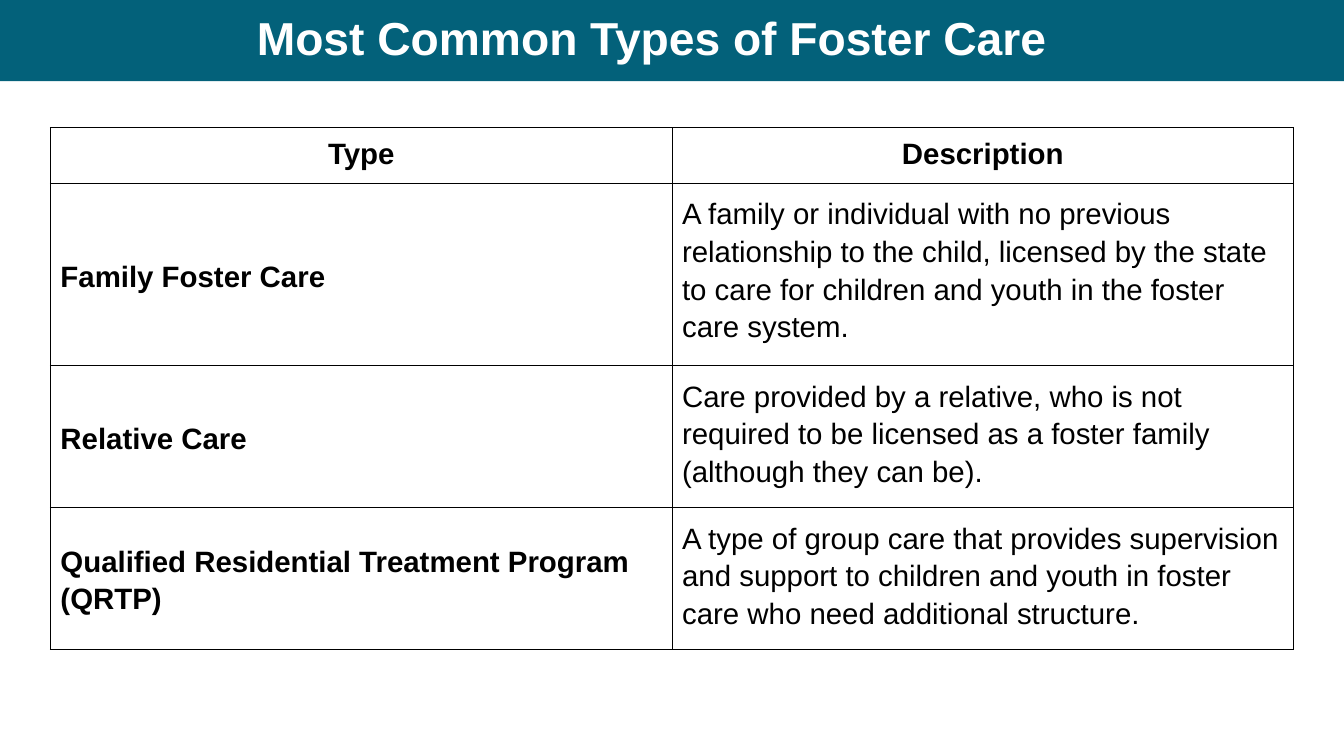
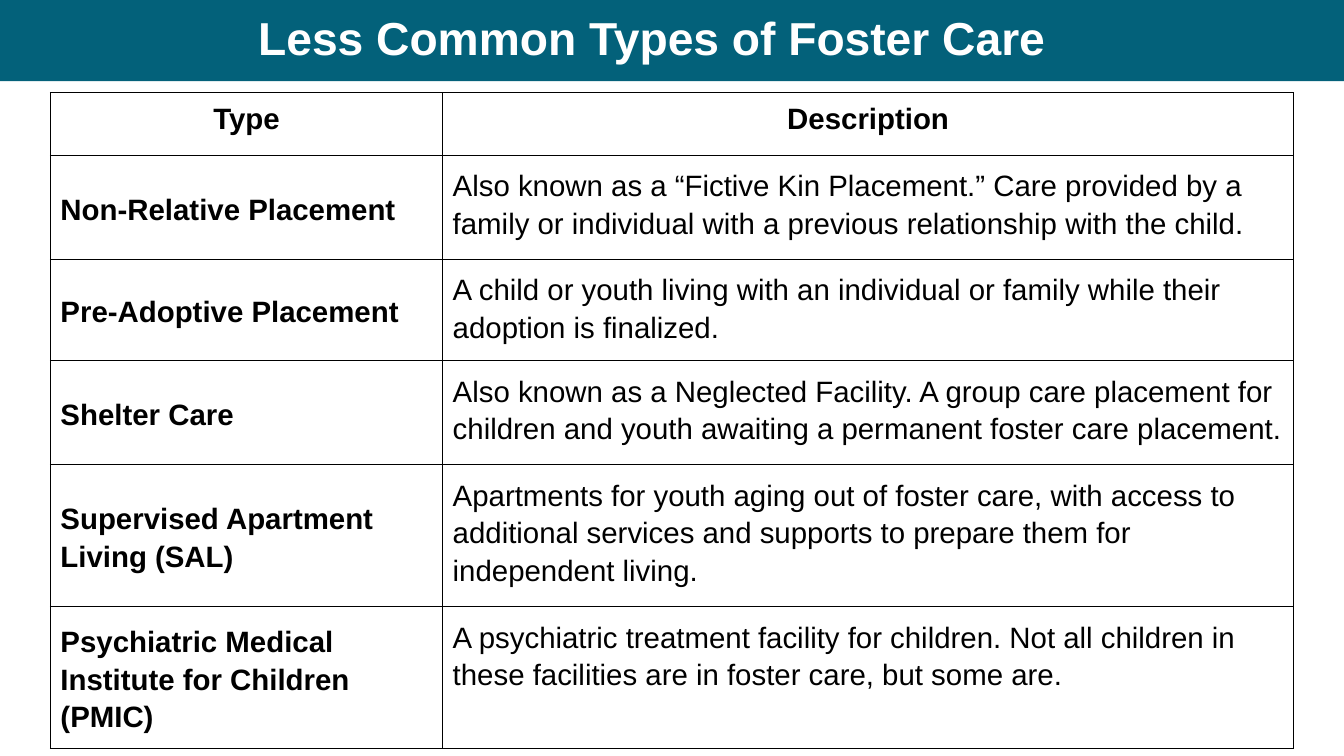
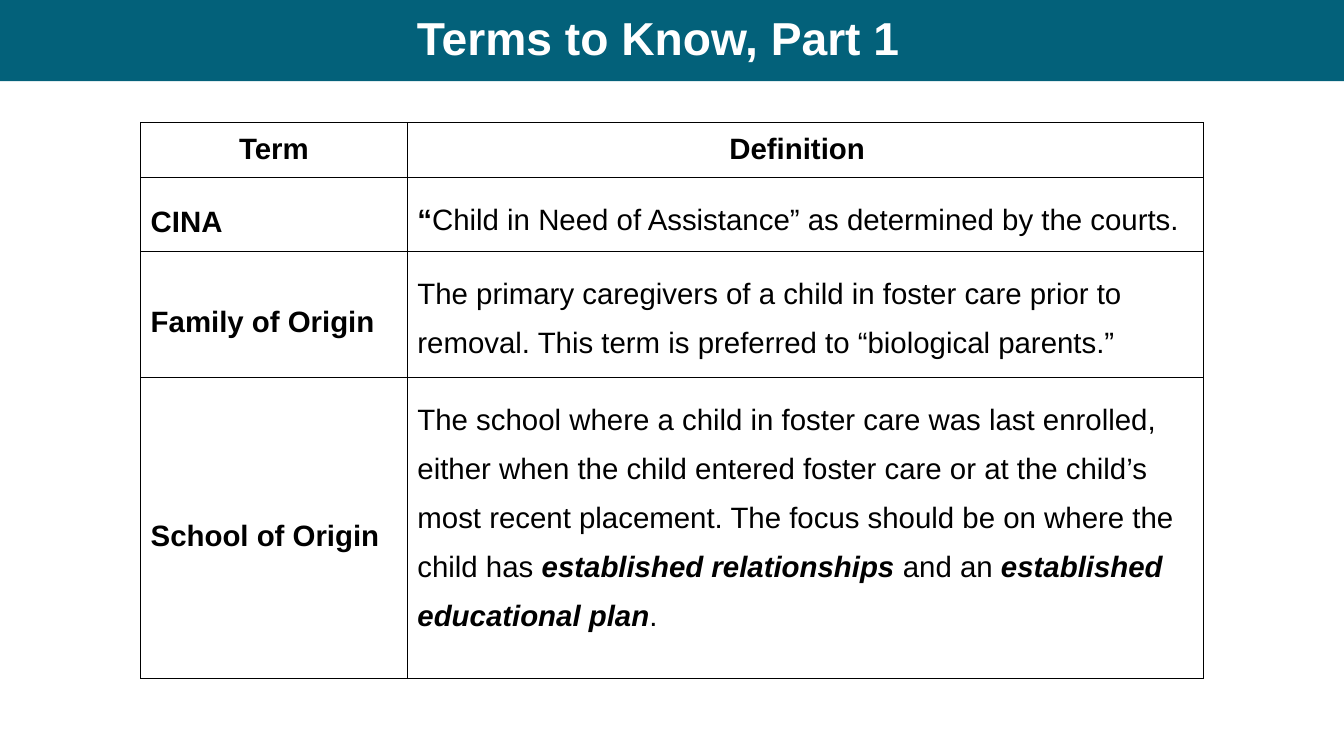
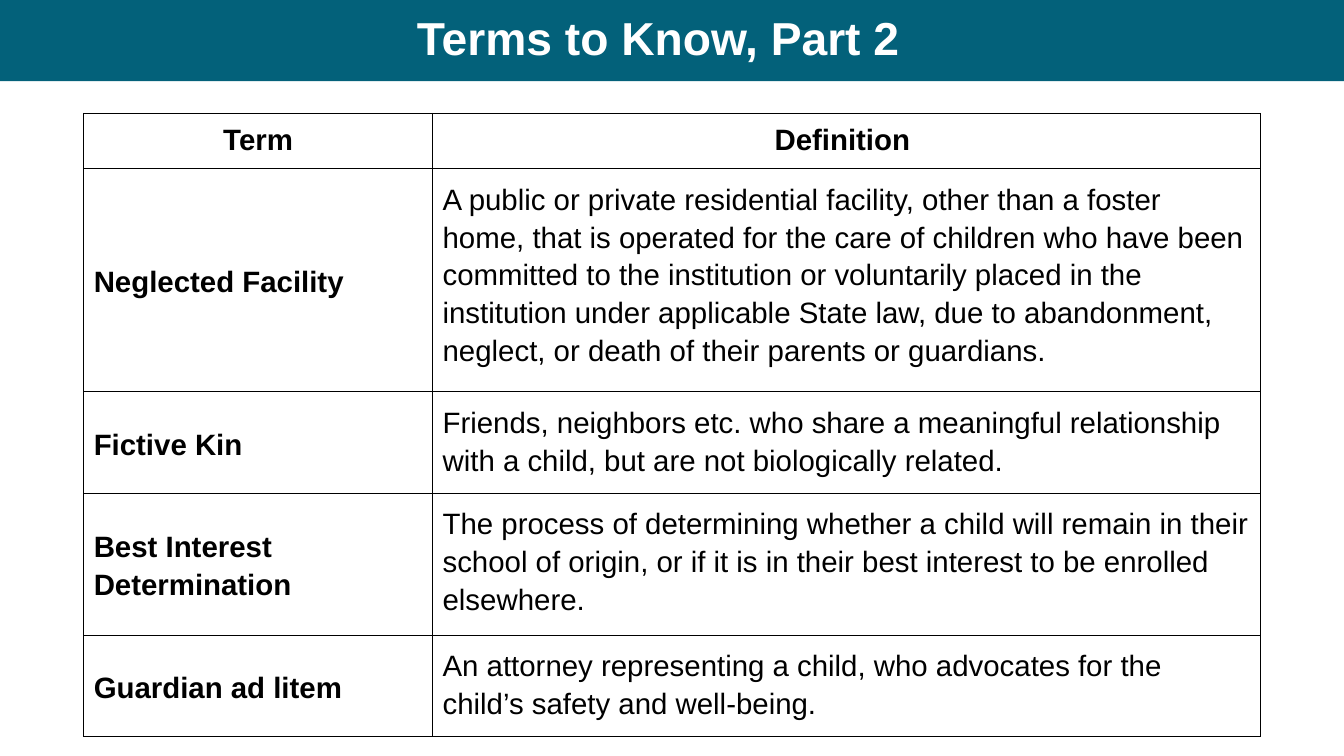
from dataclasses import dataclass

from lxml.etree import SubElement
from pptx import Presentation
from pptx.dml.color import RGBColor
from pptx.enum.shapes import MSO_SHAPE
from pptx.enum.text import MSO_ANCHOR, PP_ALIGN
from pptx.oxml import parse_xml
from pptx.oxml.ns import nsdecls, qn
from pptx.util import Inches, Pt


@dataclass(frozen=True)
class Theme:
    font: str = "Arial"
    teal: str = "03617A"
    white: str = "FFFFFF"
    black: str = "000000"
    title_size: float = 33
    body_size: float = 21
    space_before: float = 7.5
    border: float = 0.75
    cell_margin: float = 0.1


@dataclass(frozen=True)
class Glossary:
    """A titled table; lengths are percentages of the slide, the split of the table.

    Row heights are minimums: rows grow with their text, up to about the height.
    """
    title: str
    headings: tuple
    top: float
    width: float
    height: float
    split: float
    row_heights: tuple
    entries: tuple
    line_spacing: float = 1.15


THEME = Theme()
SLIDE_W, SLIDE_H = Inches(13.33), Inches(7.5)
BAND_HEIGHT = 10.75
TITLE_LEFT, TITLE_WIDTH = 2.78, 92.4

TYPE_HEADINGS = ("Type", "Description")

# A description is a string, or a list of (text, bold, italic) runs.
GLOSSARIES = (
    Glossary(
        "Most Common Types of Foster Care ", TYPE_HEADINGS,
        top=16.9, width=92.5, height=67.6, split=50, row_heights=(4.53, 5.6, 5.6, 5.6),
        entries=(
            ("Family Foster Care",
             "A family or individual with no previous relationship to the child, licensed by "
             "the state to care for children and youth in the foster care system."),
            ("Relative Care",
             "Care provided by a relative, who is not required to be licensed as a foster "
             "family (although they can be)."),
            ("Qualified Residential Treatment Program (QRTP)",
             "A type of group care that provides supervision and support to children and "
             "youth in foster care who need additional structure."),
        )),
    Glossary(
        "Less Common Types of Foster Care ", TYPE_HEADINGS,
        top=12.27, width=92.5, height=85.33, split=31.55,
        row_heights=(8.3, 13.75, 11.73, 13.75, 15.73, 15.73),
        entries=(
            ("Non-Relative Placement",
             "Also known as a “Fictive Kin Placement.” Care provided by a family or "
             "individual with a previous relationship with the child."),
            ("Pre-Adoptive Placement",
             "A child or youth living with an individual or family while their adoption is "
             "finalized."),
            ("Shelter Care",
             "Also known as a Neglected Facility. A group care placement for children and "
             "youth awaiting a permanent foster care placement."),
            ("Supervised Apartment Living (SAL)",
             "Apartments for youth aging out of foster care, with access to additional "
             "services and supports to prepare them for independent living."),
            ("Psychiatric Medical Institute for Children (PMIC)",
             "A psychiatric treatment facility for children. Not all children in these "
             "facilities are in foster care, but some are."),
        )),
    Glossary(
        "Terms to Know, Part 1", ("Term", "Definition  "),
        top=16.2, width=79.07, height=72.67, split=25.1,
        row_heights=(6.53, 9.6, 14.13, 39.87), line_spacing=1.5,
        entries=(
            ("CINA",
             [("“", True, False),
              ("Child in Need of Assistance” as determined by the courts.", False, False)]),
            ("Family of Origin",
             "The primary caregivers of a child in foster care prior to removal. This term "
             "is preferred to “biological parents.”"),
            ("School of Origin",
             [("The school where a child in foster care was last enrolled, either when the "
               "child entered foster care or at the child’s most recent placement. The focus "
               "should be on where the child has ", False, False),
              ("established relationships", True, True),
              (" and an ", False, False),
              ("established educational plan", True, True),
              (".", False, False)]),
        )),
    Glossary(
        "Terms to Know, Part 2", ("Term", "Definition "),
        top=15, width=87.55, height=80.53, split=29.65,
        row_heights=(5.6, 5.6, 5.6, 5.6, 5.6),
        entries=(
            ("Neglected Facility",
             "A public or private residential facility, other than a foster home, that is "
             "operated for the care of children who have been committed to the institution "
             "or voluntarily placed in the institution under applicable State law, due to "
             "abandonment, neglect, or death of their parents or guardians."),
            ("Fictive Kin",
             "Friends, neighbors etc. who share a meaningful relationship with a child, but "
             "are not biologically related."),
            ("Best Interest Determination",
             "The process of determining whether a child will remain in their school of "
             "origin, or if it is in their best interest to be enrolled elsewhere."),
            ("Guardian ad litem",
             "An attorney representing a child, who advocates for the child’s safety and "
             "well-being."),
        )),
)


def across(percent):
    return round(SLIDE_W * percent / 100)


def down(percent):
    return round(SLIDE_H * percent / 100)


def style(font, size, color):
    font.name, font.size = THEME.font, Pt(size)
    font.color.rgb = RGBColor.from_string(color)


def add_title_band(slide, title):
    # Full-width band
    band = slide.shapes.add_shape(MSO_SHAPE.RECTANGLE, 0, 0, SLIDE_W, down(BAND_HEIGHT))
    band.shadow.inherit = False
    band.fill.solid()
    band.fill.fore_color.rgb = RGBColor.from_string(THEME.teal)
    band.line.fill.background()

    # Title on the band
    heading = slide.shapes.add_textbox(
        across(TITLE_LEFT), 0, across(TITLE_WIDTH), down(BAND_HEIGHT))
    frame = heading.text_frame
    frame.word_wrap = True
    frame.vertical_anchor = MSO_ANCHOR.MIDDLE
    paragraph = frame.paragraphs[0]
    paragraph.text = title
    paragraph.alignment = PP_ALIGN.CENTER
    paragraph.line_spacing = 0.9
    style(paragraph.font, THEME.title_size, THEME.white)
    paragraph.font.bold = True


def add_borders(cell):
    properties = cell._tc.get_or_add_tcPr()
    for position, side in enumerate(("lnL", "lnR", "lnT", "lnB")):
        line = parse_xml(f'<a:{side} {nsdecls("a")} w="{Pt(THEME.border)}"/>')
        fill = SubElement(line, qn("a:solidFill"))
        SubElement(fill, qn("a:srgbClr"), val=THEME.black)
        properties.insert(position, line)


def fill_cell(cell, content, bold):
    cell.fill.background()
    add_borders(cell)
    margin = Inches(THEME.cell_margin)
    cell.margin_left = cell.margin_right = cell.margin_top = cell.margin_bottom = margin
    paragraph = cell.text_frame.paragraphs[0]
    style(paragraph.font, THEME.body_size, THEME.black)
    if isinstance(content, str):
        paragraph.text = content
        paragraph.font.bold = bold
    else:
        for text, run_bold, italic in content:
            run = paragraph.add_run()
            run.text = text
            run.font.bold, run.font.italic = run_bold, italic
    return paragraph


def add_glossary_table(slide, glossary):
    width, height = across(glossary.width), down(glossary.height)
    holder = slide.shapes.add_table(
        len(glossary.row_heights), 2, (SLIDE_W - width) // 2, down(glossary.top),
        width, height)
    table = holder.table
    table.first_row = table.horz_banding = False
    term_width = round(width * glossary.split / 100)
    table.columns[0].width, table.columns[1].width = term_width, width - term_width
    for row, row_height in zip(table.rows, glossary.row_heights):
        row.height = down(row_height)
    # Row changes reset the outer height
    holder.height = height

    # Heading row
    for column, heading in enumerate(glossary.headings):
        fill_cell(table.cell(0, column), heading, True).alignment = PP_ALIGN.CENTER

    # Terms and their descriptions
    for row, entry in enumerate(glossary.entries, start=1):
        for column, content in enumerate(entry):
            paragraph = fill_cell(table.cell(row, column), content, column == 0)
            paragraph.line_spacing = glossary.line_spacing
            paragraph.space_before = Pt(THEME.space_before)
        table.cell(row, 0).vertical_anchor = MSO_ANCHOR.MIDDLE


def main():
    deck = Presentation()
    deck.slide_width, deck.slide_height = SLIDE_W, SLIDE_H
    blank = deck.slide_layouts[6]
    for glossary in GLOSSARIES:
        slide = deck.slides.add_slide(blank)
        add_title_band(slide, glossary.title)
        add_glossary_table(slide, glossary)
    deck.save("out.pptx")


if __name__ == "__main__":
    main()
